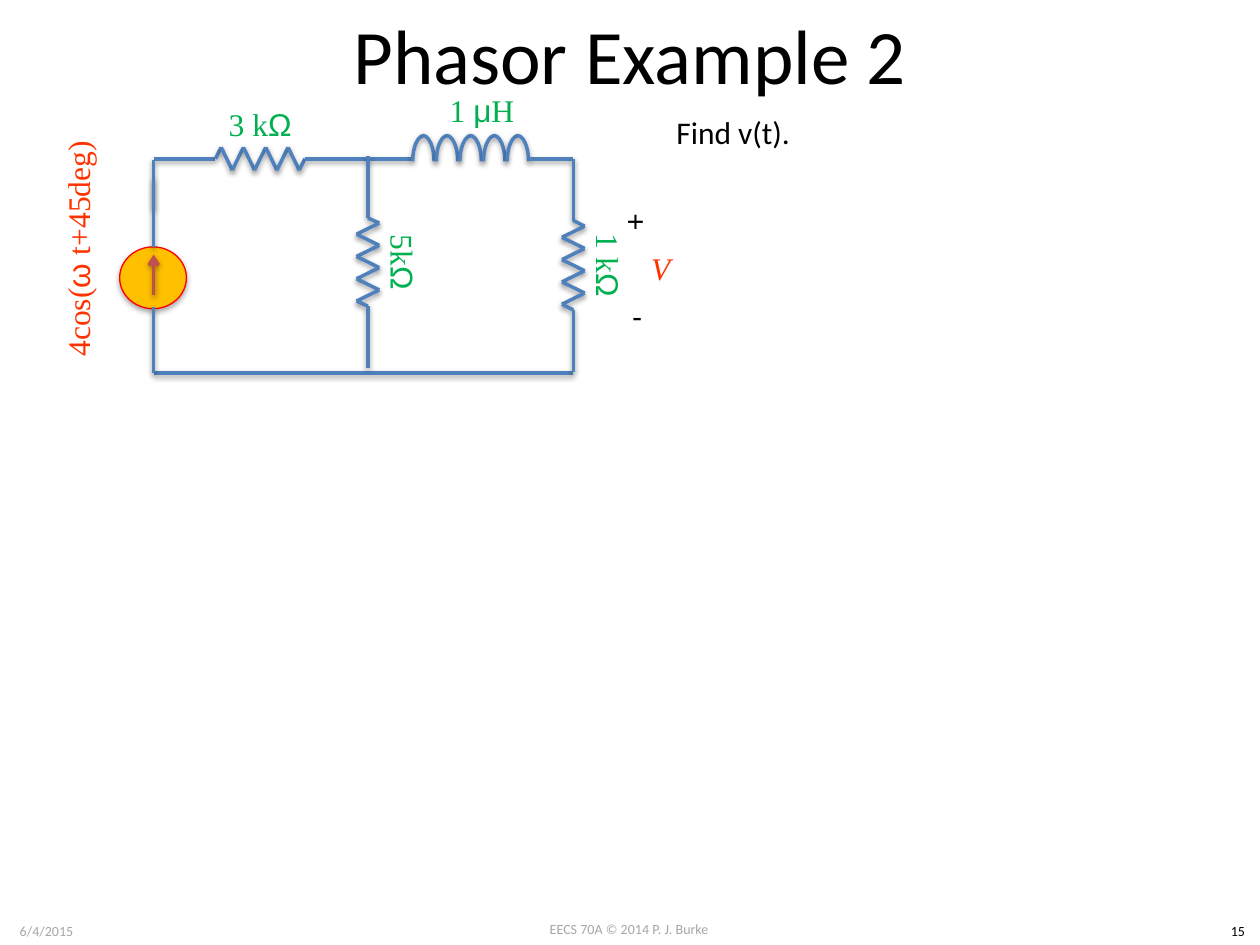
from lxml import etree
from pptx import Presentation
from pptx.dml.color import RGBColor
from pptx.enum.shapes import MSO_CONNECTOR, MSO_SHAPE
from pptx.enum.text import MSO_ANCHOR, MSO_AUTO_SIZE, PP_ALIGN
from pptx.oxml.ns import qn
from pptx.util import Inches, Pt

LINE = MSO_CONNECTOR.STRAIGHT
ARC, OVAL = MSO_SHAPE.ARC, MSO_SHAPE.OVAL
MIDDLE, TOP = MSO_ANCHOR.MIDDLE, MSO_ANCHOR.TOP
CENTER, LEFT = PP_ALIGN.CENTER, PP_ALIGN.LEFT
FIT = MSO_AUTO_SIZE.SHAPE_TO_FIT_TEXT

COLORS = {"wire": "4F81BD", "arrow": "C0504D", "source": "FFC000",
          "rim": "FF0000", "value": "00B050", "signal": "FF3300",
          "text": "000000", "footer": "A6A6A6"}
SERIF, SANS, GREEK = "Times New Roman", "Calibri", "Arial"


def rgb(name):
    return RGBColor.from_string(COLORS[name])


def add_runs(p, runs, size, color, italic=None):
    for text, font in runs:
        r = p.add_run()
        r.text = text
        r.font.name, r.font.size = font, Pt(size)
        r.font.color.rgb = rgb(color)
        r.font.italic = italic


def add_text(shapes, box, runs, color, size=18, align=CENTER, anchor=MIDDLE,
             rotation=0, wrap=True, italic=None):
    sp = shapes.add_textbox(*map(Inches, box))
    sp.rotation = rotation
    tf = sp.text_frame
    tf.word_wrap, tf.vertical_anchor = wrap, anchor
    if anchor == TOP:
        tf.auto_size = FIT
    p = tf.paragraphs[0]
    p.alignment = align
    add_runs(p, runs, size, color, italic)
    return sp


def set_effect(sp, idx):
    """Choose the theme effect that gives the soft shadow."""
    for ref in sp._element.iter(qn("a:effectRef")):
        ref.set("idx", str(idx))


def add_wire(shapes, start, end, color="wire"):
    ln = shapes.add_connector(LINE, *map(Inches, (*start, *end)))
    ln.line.color.rgb = rgb(color)
    ln.line.width = Pt(2)
    set_effect(ln, 1)
    return ln


def resistor(shapes, x, y, length, runs, vertical=False):
    """Two leads, a zigzag between them and a value label beside it."""
    grp = shapes.add_group_shape().shapes
    lead, amp, step = 0.49, 0.09, 0.0885
    first = length / 2 - 3.5 * step

    def place(along, across):
        return (x - across, y + along) if vertical else (x + along, y + across)

    peaks = [(first + i * step, amp if i % 2 else -amp) for i in range(8)]
    points = [(0, 0), (lead, 0), *peaks, (length - lead, 0), (length, 0)]
    for a, b in zip(points, points[1:]):
        add_wire(grp, place(*a), place(*b))

    w, h = 1.19, 0.73
    cx, cy = place(length / 2, -0.28)
    add_text(grp, (cx - w / 2, cy - h / 2, w, h), runs, "value",
             rotation=90 if vertical else 0)


def inductor(shapes, x, y, length):
    """Five humps, each made of two mirrored quarter arcs."""
    grp = shapes.add_group_shape().shapes
    lead, w, h, pitch = 0.35, 0.41, 0.18, 0.1875
    add_wire(grp, (x + lead, y), (x, y))
    for i in range(5):
        for mirrored in (False, True):
            left = x + 0.24 + i * pitch - (0.01 if mirrored else 0)
            sp = grp.add_shape(ARC, *map(Inches, (left, y - 0.07, w, h)))
            sp.rotation = 270
            if mirrored:
                sp._element.spPr.find(qn("a:xfrm")).set("flipV", "1")
            sp.fill.background()
            sp.line.color.rgb = rgb("wire")
            sp.line.width = Pt(2)
            set_effect(sp, 1)
    add_wire(grp, (x + length, y), (x + length - lead, y))
    add_text(shapes, (x + 0.31, y - 0.75, 1.19, 0.73),
             [("1 ", SERIF), ("μ", GREEK), ("H", SERIF)], "value")


def current_source(shapes, x, y, height):
    """Circle with an upward arrow, its leads and its label."""
    add_wire(shapes, (x, y + 0.4), (x, y + 0.01))
    grp = shapes.add_group_shape().shapes
    sp = grp.add_shape(OVAL, *map(Inches, (x - 0.27, y + 0.7, 0.53, 0.49)))
    sp.fill.solid()
    sp.fill.fore_color.rgb = rgb("source")
    sp.line.color.rgb = rgb("rim")
    sp.line.width = Pt(0.75)
    set_effect(sp, 2)
    arrow = add_wire(grp, (x, y + 1.08), (x, y + 0.76), "arrow")
    etree.SubElement(arrow.line._get_or_add_ln(), qn("a:tailEnd"), type="arrow")
    add_wire(grp, (x, y + 0.7), (x, y + 0.15))
    add_wire(grp, (x, y + 1.18), (x, y + height))
    add_text(shapes, (x - 1.66, y + 0.41, 2.11, 0.61),
             [("4cos(", SERIF), ("ω ", GREEK), ("t+45deg)", SERIF)],
             "signal", rotation=270)


def output_voltage(shapes, x, y):
    """Polarity marks around the voltage symbol."""
    grp = shapes.add_group_shape().shapes
    add_text(grp, (x + 0.04, y, 0.33, 0.4), [("+", SANS)], "text",
             align=LEFT, anchor=TOP, rotation=90, wrap=False)
    add_text(grp, (x + 0.06, y + 0.74, 0.28, 0.4), [("-", SANS)], "text",
             align=LEFT, anchor=TOP, wrap=False)
    add_text(grp, (x, y + 0.25, 0.77, 0.61), [("V", SERIF)], "signal",
             italic=True)


def circuit(shapes, x, y, width, height):
    middle = x + 1.7
    resistor(shapes, x, y, 1.69, [("3 k", SERIF), ("Ω", GREEK)])
    add_wire(shapes, (x, y + height), (x + width, y + height))
    current_source(shapes, x, y, height)
    inductor(shapes, middle, y, width - 1.7)
    resistor(shapes, middle, y - 0.02, 1.68,
             [("5k", SERIF), ("Ω", GREEK)], vertical=True)
    resistor(shapes, x + width, y, 1.69,
             [("1 k", SERIF), ("Ω", GREEK)], vertical=True)
    output_voltage(shapes, x + width + 0.31, y + 0.31)


def title(slide, box):
    sp = slide.shapes.title
    sp.left, sp.top, sp.width, sp.height = map(Inches, box)
    sp.text_frame.vertical_anchor = MIDDLE
    p = sp.text_frame.paragraphs[0]
    p.alignment = CENTER
    add_runs(p, [("Phasor Example 2", SANS)], 44, "text")


def footer(shapes, top):
    for left, y, width, text, color in (
            (3.83, top, 2.33, "EECS 70A © 2014 P. J. Burke", "footer"),
            (0, top + 0.01, 0.74, "6/4/2015", "footer"),
            (9.65, top + 0.01, 0.35, "15", "text")):
        add_text(shapes, (left, y, width, 0.24), [(text, SANS)], color,
                 size=8, anchor=TOP)


def main():
    prs = Presentation()
    prs.slide_width, prs.slide_height = Inches(10), Inches(7.5)
    slide = prs.slides.add_slide(prs.slide_layouts[5])
    shapes = slide.shapes
    footer(shapes, 7.26)
    title(slide, (0.5, 0, 9, 0.85))
    circuit(shapes, 1.22, 1.26, 3.33, 1.7)
    # Task
    add_text(shapes, (5.27, 0.85, 1.69, 0.4), [("Find v(t).", SANS)], "text",
             align=LEFT, anchor=TOP)
    prs.save("out.pptx")


if __name__ == "__main__":
    main()
